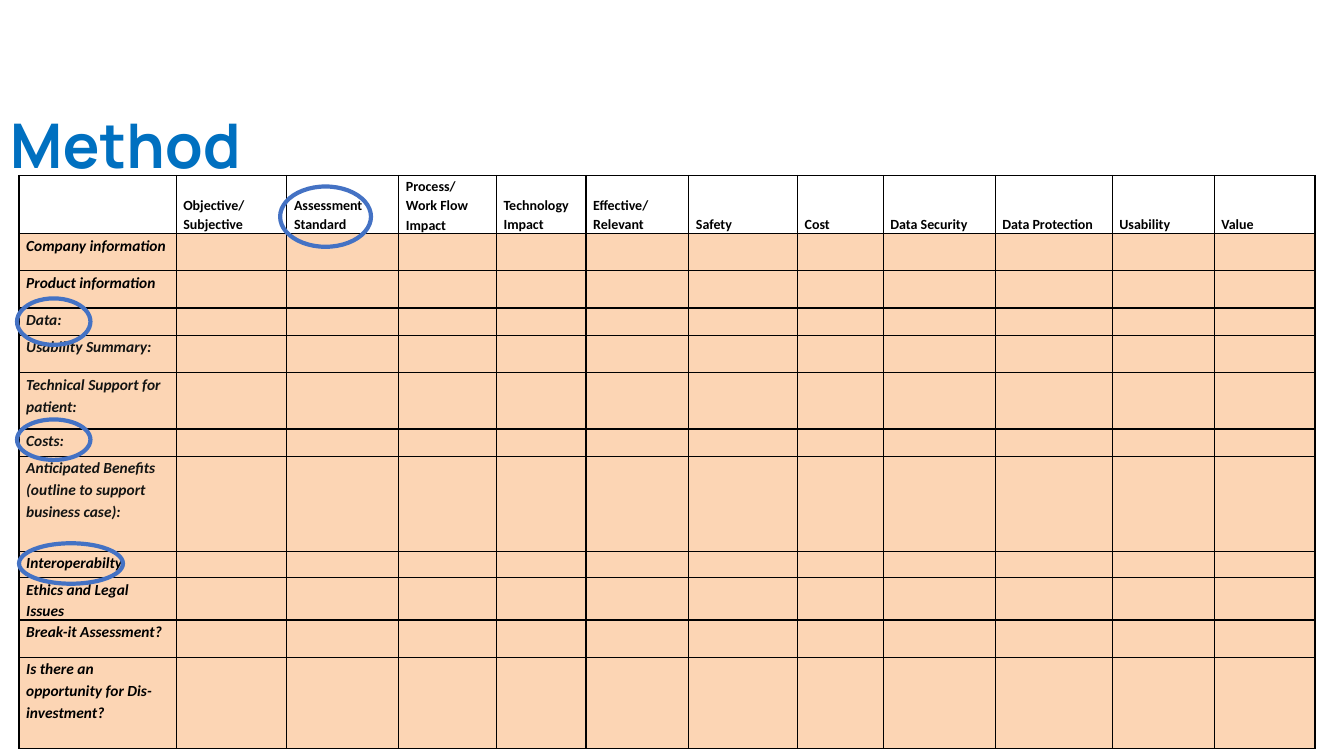
from lxml import etree
from pptx import Presentation
from pptx.dml.color import RGBColor
from pptx.enum.shapes import MSO_SHAPE
from pptx.enum.text import MSO_ANCHOR
from pptx.oxml.ns import qn
from pptx.util import Cm, Pt

OVAL = MSO_SHAPE.OVAL
TOP, BOTTOM = MSO_ANCHOR.TOP, MSO_ANCHOR.BOTTOM

TITLE = "Method"
# heading, column width in cm
COLS = [
    ("", 3.96),
    ("Objective/\nSubjective", 2.79),
    ("Assessment Standard", 2.82),
    ("Process/\nWork Flow Impact", 2.46),
    ("Technology Impact", 2.26),
    ("Effective/\nRelevant", 2.59),
    ("Safety", 2.74),
    ("Cost", 2.16),
    ("Data Security", 2.82),
    ("Data Protection", 2.95),
    ("Usability", 2.57),
    ("Value", 2.54),
]
BLACK, INK = "000000", "131413"
# label, row height in cm, text colour
ROWS = [
    ("Company information", 0.94, BLACK),
    ("Product information", 0.94, BLACK),
    ("Data:", 0.69, INK),
    ("Usability Summary:", 0.94, INK),
    ("Technical Support for patient:", 1.42, INK),
    ("Costs:", 0.69, INK),
    ("Anticipated Benefits (outline to support business case):", 2.39, INK),
    ("Interoperabilty", 0.66, BLACK),
    ("Ethics and Legal Issues", 0.94, BLACK),
    ("Break-it Assessment?", 0.94, BLACK),
    ("Is there an opportunity for Dis-investment?", 2.29, BLACK),
]
HEAD = 1.45
LEFT, UPPER = 0.48, 4.42
# left, top, width, height in cm
RINGS = [
    (0.43, 7.52, 1.85, 1.17),
    (0.43, 10.57, 1.85, 1.02),
    (0.48, 13.69, 2.62, 1.02),
    (7.06, 4.7, 2.29, 1.52),
]


def color(code):
    return RGBColor.from_string(code)


def style(para, font, size, code, italic=False):
    for run in para.runs:
        run.font.name = font
        run.font.size = Pt(size)
        run.font.bold = True
        run.font.italic = italic
        run.font.color.rgb = color(code)


def border(cell):
    props = cell._tc.get_or_add_tcPr()
    for side in ("lnL", "lnR", "lnT", "lnB"):
        line = etree.SubElement(props, qn("a:" + side), w=str(Pt(1)))
        fill = etree.SubElement(line, qn("a:solidFill"))
        etree.SubElement(fill, qn("a:srgbClr"), val=BLACK)


def write(cell, text, size, code, italic, anchor):
    cell.margin_left = cell.margin_right = Cm(0.18)
    cell.margin_top = cell.margin_bottom = 0
    cell.vertical_anchor = anchor
    cell.text_frame.text = text
    for para in cell.text_frame.paragraphs:
        para.line_spacing = 1.15
        style(para, "Calibri", size, code, italic)
        if not text:  # keeps empty cells from stretching their row
            etree.SubElement(para._p, qn("a:endParaRPr"), sz=str(size * 100))


deck = Presentation()
deck.slide_width, deck.slide_height = Cm(33.87), Cm(19.05)
slide = deck.slides.add_slide(deck.slide_layouts[6])

title = slide.shapes.add_textbox(0, Cm(1.02), Cm(29.21), Cm(3.68)).text_frame
title.word_wrap = True
title.vertical_anchor = BOTTOM
title.text = TITLE
title.paragraphs[0].line_spacing = 0.9
style(title.paragraphs[0], "Manrope", 44, "0070C0")

wide = sum(width for _, width in COLS)
high = HEAD + sum(height for _, height, _ in ROWS)
grid = slide.shapes.add_table(len(ROWS) + 1, len(COLS), Cm(LEFT), Cm(UPPER),
                              Cm(wide), Cm(high)).table
grid.first_row = grid.horz_banding = False
for c, (text, width) in enumerate(COLS):
    grid.columns[c].width = Cm(width)
    write(grid.cell(0, c), text, 10, BLACK, False, BOTTOM)
grid.rows[0].height = Cm(HEAD)
for r, (label, height, code) in enumerate(ROWS, 1):
    grid.rows[r].height = Cm(height)
    for c in range(len(COLS)):
        write(grid.cell(r, c), "" if c else label, 11, code, True, TOP)
for r, row in enumerate(grid.rows):
    for cell in row.cells:
        border(cell)
        if r:
            cell.fill.solid()
            cell.fill.fore_color.rgb = color("FCD5B4")
        else:
            cell.fill.background()

for box in RINGS:
    ring = slide.shapes.add_shape(OVAL, *map(Cm, box))
    ring.shadow.inherit = False
    ring.fill.background()
    ring.line.color.rgb = color("4472C4")
    ring.line.width = Pt(3)

deck.save("out.pptx")
